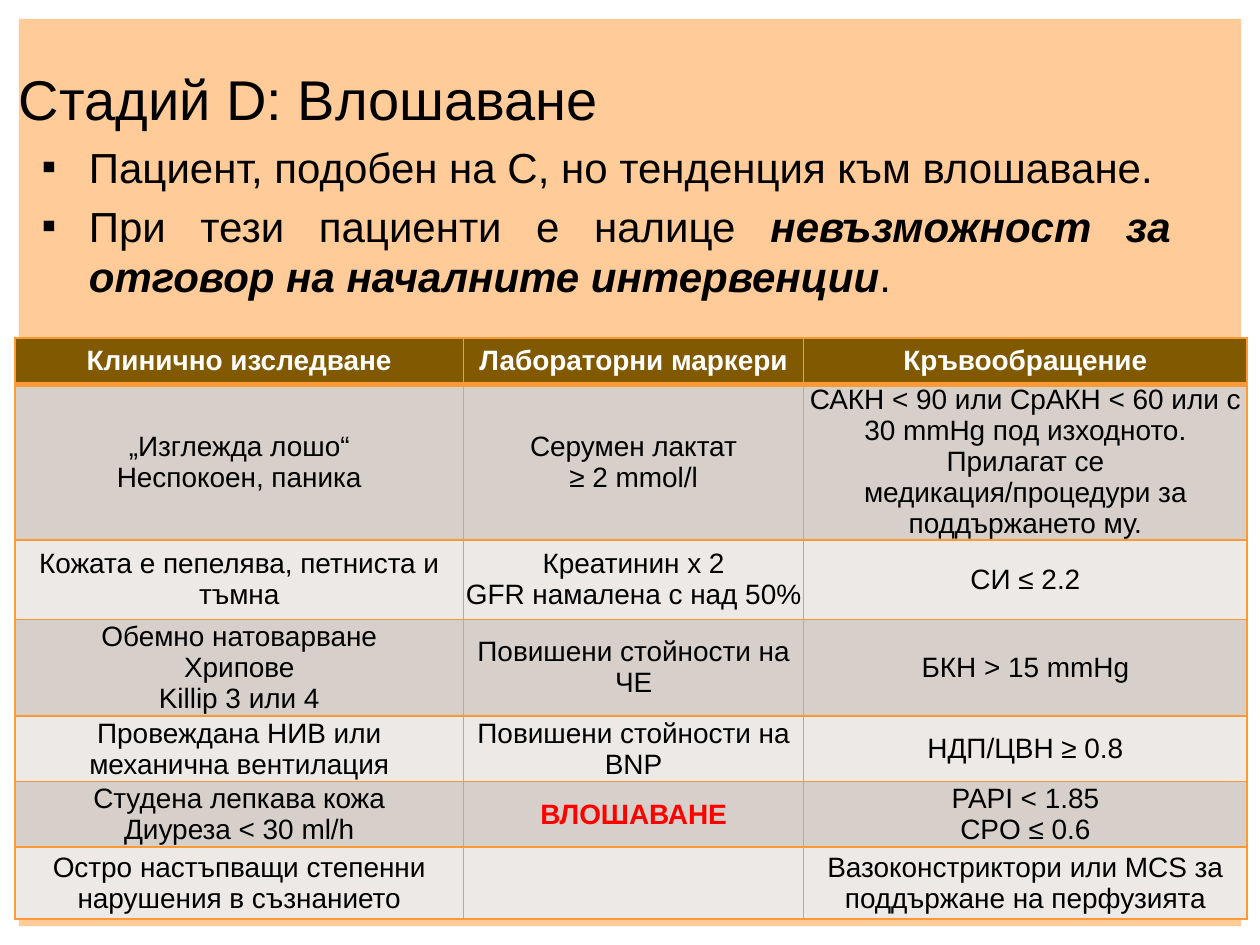
import pptx
import pptx.dml.color
import pptx.enum.shapes
import pptx.enum.text
import pptx.oxml.ns
import pptx.util
from lxml import etree

Pt = pptx.util.Pt
RGBColor = pptx.dml.color.RGBColor
ALIGN = pptx.enum.text.PP_ALIGN
ANCHOR = pptx.enum.text.MSO_ANCHOR
qualified = pptx.oxml.ns.qn

ORANGE = RGBColor(0xFF, 0x99, 0x33)
BROWN = RGBColor(0x80, 0x59, 0x00)
DARK_BAND = RGBColor(0xD7, 0xD0, 0xCA)
LIGHT_BAND = RGBColor(0xEC, 0xE9, 0xE6)
BLACK = RGBColor(0, 0, 0)
WHITE = RGBColor(0xFF, 0xFF, 0xFF)
RED = RGBColor(0xFF, 0, 0)
FONT = "Arial"

TITLE = "Стадий D: Влошаване"
BULLETS = [
    [("Пациент, подобен на С, но тенденция към влошаване.", False)],
    [("При тези пациенти е налице ", False),
     ("невъзможност за отговор на началните интервенции", True),
     (".", False)],
]
WARNING = "ВЛОШАВАНЕ"
ROWS = [
    ("Клинично изследване", "Лабораторни маркери", "Кръвообращение"),
    ("„Изглежда лошо“\nНеспокоен, паника", "Серумен лактат\n≥ 2 mmol/l",
     "САКН < 90 или СрАКН < 60 или с 30 mmHg под изходното. Прилагат се "
     "медикация/процедури за поддържането му."),
    ("Кожата е пепелява, петниста и тъмна",
     "Креатинин х 2\nGFR намалена с над 50%", "СИ ≤ 2.2"),
    ("Обемно натоварване\nХрипове\nKillip 3 или 4",
     "Повишени стойности на ЧЕ", "БКН > 15 mmHg"),
    ("Провеждана НИВ или\nмеханична вентилация",
     "Повишени стойности на BNP", "НДП/ЦВН ≥ 0.8"),
    ("Студена лепкава кожа\nДиуреза < 30 ml/h", WARNING,
     "PAPI < 1.85\nCPO ≤ 0.6"),
    ("Остро настъпващи степенни нарушения в съзнанието", "",
     "Вазоконстриктори или MCS за поддържане на перфузията"),
]
COLUMN_WIDTHS = [256.3, 194.4, 253.4]
ROW_HEIGHTS = [26.6, 74.2, 45.4, 55.4, 37.4, 37.4, 41]


def place(shape, box):
    shape.left, shape.top, shape.width, shape.height = map(Pt, box)


def format_frame(frame, anchor):
    frame.word_wrap = True
    frame.auto_size = pptx.enum.text.MSO_AUTO_SIZE.NONE
    frame.vertical_anchor = anchor
    frame.margin_left = frame.margin_right = Pt(3.6)
    frame.margin_top = frame.margin_bottom = Pt(3.6)


def format_paragraph(paragraph, alignment, size, color=BLACK, bold=False):
    paragraph.alignment = alignment
    font = paragraph.font
    font.name, font.size, font.bold = FONT, Pt(size), bold
    font.color.rgb = color


def add_panel(slide, box):
    panel = slide.shapes.add_shape(
        pptx.enum.shapes.MSO_SHAPE.RECTANGLE, *map(Pt, box))
    panel.shadow.inherit = False
    panel.line.fill.background()
    panel.fill.solid()
    panel.fill.fore_color.rgb = ORANGE
    color = panel.element.spPr.find(".//" + qualified("a:srgbClr"))
    etree.SubElement(color, qualified("a:alpha"), val="50000")
    slide.shapes.title.element.addprevious(panel.element)


def fill_title(slide, box):
    title = slide.shapes.title
    place(title, box)
    format_frame(title.text_frame, ANCHOR.MIDDLE)
    title.text_frame.text = TITLE
    format_paragraph(title.text_frame.paragraphs[0], ALIGN.LEFT, 32)


def add_bullet(paragraph):
    properties = paragraph._p.get_or_add_pPr()
    properties.set("marL", str(Pt(27)))
    properties.set("indent", str(Pt(-27)))
    color = etree.SubElement(properties, qualified("a:buClr"))
    etree.SubElement(color, qualified("a:srgbClr"), val=str(BLACK))
    etree.SubElement(properties, qualified("a:buFont"), typeface=FONT)
    etree.SubElement(properties, qualified("a:buChar"), char="▪")


def fill_bullets(slide, box):
    body = slide.placeholders[1]
    place(body, box)
    frame = body.text_frame
    format_frame(frame, ANCHOR.TOP)
    for index, parts in enumerate(BULLETS):
        paragraph = frame.add_paragraph() if index else frame.paragraphs[0]
        add_bullet(paragraph)
        paragraph.space_before = Pt(5 if index else 0)
        format_paragraph(paragraph, ALIGN.JUSTIFY, 24)
        for text, emphasized in parts:
            run = paragraph.add_run()
            run.text = text
            if emphasized:
                run.font.bold = run.font.italic = True


def add_borders(cell, top, bottom):
    properties = cell._tc.get_or_add_tcPr()
    for side, width in (("L", 1), ("R", 1), ("T", top), ("B", bottom)):
        line = etree.SubElement(
            properties, qualified("a:ln" + side), w=str(Pt(width)))
        fill = etree.SubElement(line, qualified("a:solidFill"))
        etree.SubElement(fill, qualified("a:srgbClr"), val=str(ORANGE))


def fill_cell(cell, text, row_index):
    header = row_index == 0
    warning = text == WARNING
    cell.margin_left = cell.margin_right = 0
    cell.margin_top = cell.margin_bottom = 0
    cell.vertical_anchor = ANCHOR.MIDDLE
    add_borders(cell, 3 if row_index == 1 else 1, 3 if header else 1)
    cell.fill.solid()
    band = DARK_BAND if row_index % 2 else LIGHT_BAND
    cell.fill.fore_color.rgb = BROWN if header else band
    cell.text_frame.text = text
    color = WHITE if header else RED if warning else BLACK
    for paragraph in cell.text_frame.paragraphs:
        format_paragraph(paragraph, ALIGN.CENTER, 16, color, header or warning)


def add_findings_table(slide, left, top):
    frame = slide.shapes.add_table(
        len(ROWS), len(COLUMN_WIDTHS), Pt(left), Pt(top),
        Pt(sum(COLUMN_WIDTHS)), Pt(sum(ROW_HEIGHTS)))
    table = frame.table
    table.horz_banding = False
    for column, width in zip(table.columns, COLUMN_WIDTHS):
        column.width = Pt(width)
    for row_index, texts in enumerate(ROWS):
        row = table.rows[row_index]
        row.height = Pt(ROW_HEIGHTS[row_index])
        for cell, text in zip(row.cells, texts):
            fill_cell(cell, text, row_index)


def main():
    presentation = pptx.Presentation()
    presentation.slide_width, presentation.slide_height = Pt(720), Pt(540)
    slide = presentation.slides.add_slide(presentation.slide_layouts[1])
    add_panel(slide, (10.8, 10.8, 698.4, 518.4))
    fill_title(slide, (7.2, 3.6, 633.6, 104.4))
    fill_bullets(slide, (20.2, 77, 652.3, 245.5))
    add_findings_table(slide, 8.6, 193)
    presentation.save("out.pptx")


if __name__ == "__main__":
    main()
